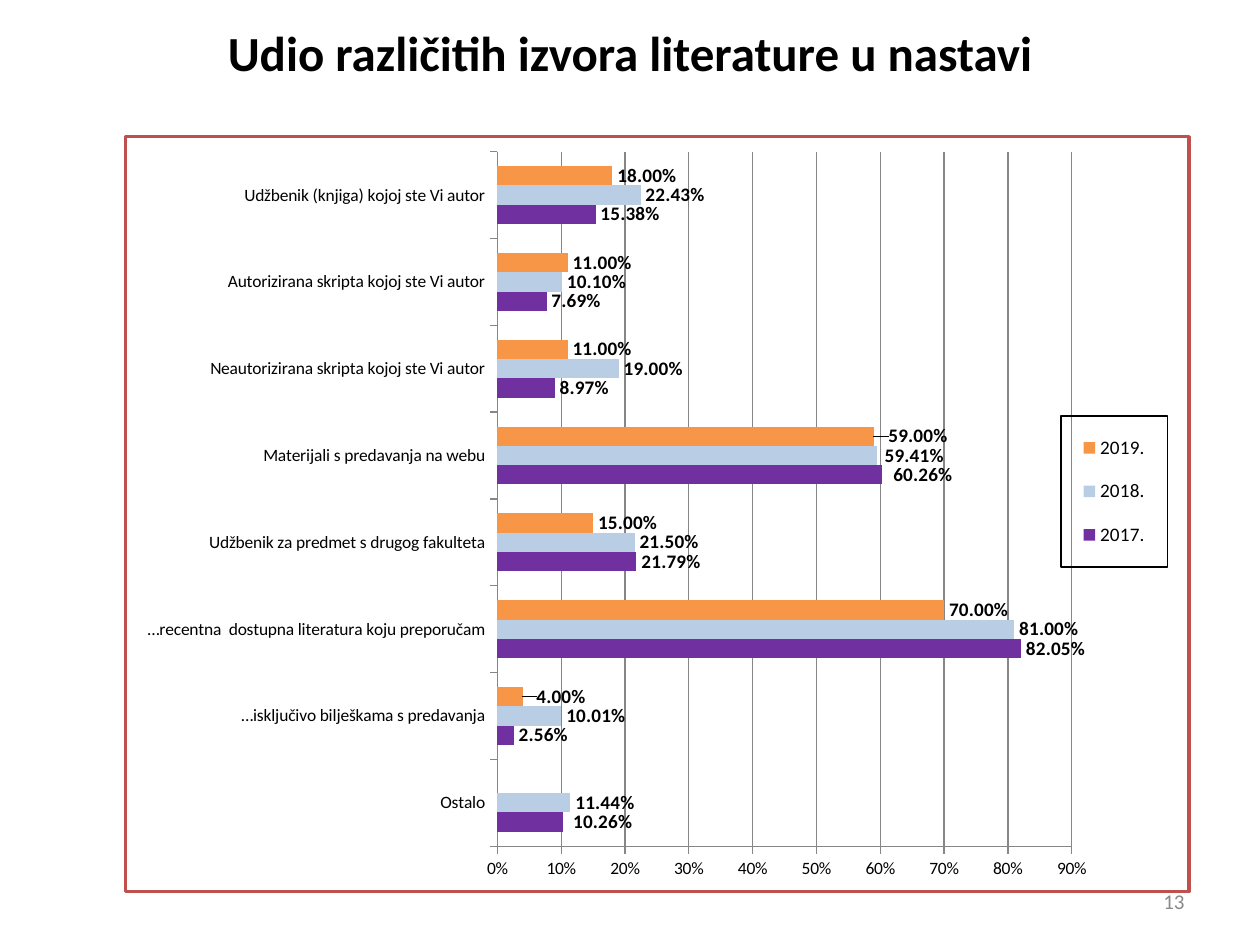
import pptx
import pptx.chart.data
import pptx.dml.color
import pptx.enum.chart
import pptx.enum.text
import pptx.oxml
import pptx.oxml.ns
import pptx.util
from pptx.util import Cm

FONT = "Calibri"
COLORS = {
    "text": "000000",
    "background": "FFFFFF",
    "border": "C0504D",
    "page number": "898989",
    "axis": "868686",
    "2017.": "7030A0",
    "2018.": "B9CDE5",
    "2019.": "F79646",
}
CATEGORIES = [
    "Ostalo",
    "…isključivo bilješkama s predavanja",
    "…recentna  dostupna literatura koju preporučam",
    "Udžbenik za predmet s drugog fakulteta",
    "Materijali s predavanja na webu",
    "Neautorizirana skripta kojoj ste Vi autor",
    "Autorizirana skripta kojoj ste Vi autor",
    "Udžbenik (knjiga) kojoj ste Vi autor",
]
SHARES = {
    "2017.": [0.1026, 0.0256, 0.8205, 0.2179, 0.6026, 0.0897, 0.0769, 0.1538],
    "2018.": [0.1144, 0.1001, 0.81, 0.215, 0.5941, 0.19, 0.101, 0.2243],
    "2019.": [None, 0.04, 0.7, 0.15, 0.59, 0.11, 0.11, 0.18],
}
# Labels moved right, by series and category index, as a share of chart width
LABEL_SHIFTS = {
    "2017.": {0: 0.005, 4: 0.006},
    "2018.": {4: 0.003},
    "2019.": {1: 0.008, 4: 0.009},
}


def rgb(name):
    return pptx.dml.color.RGBColor.from_string(COLORS[name])


def style_font(font, size, color="text", bold=False):
    font.name = FONT
    font.size = pptx.util.Pt(size)
    font.bold = bold
    font.color.rgb = rgb(color)


def write_text(shape, text, size, alignment, color="text", bold=False):
    frame = shape.text_frame
    frame.word_wrap = True
    frame.vertical_anchor = pptx.enum.text.MSO_ANCHOR.MIDDLE
    paragraph = frame.paragraphs[0]
    paragraph.alignment = alignment
    run = paragraph.add_run()
    run.text = text
    style_font(run.font, size, color, bold)


def chart_xml(content):
    return pptx.oxml.parse_xml(content.replace(
        ">", " " + pptx.oxml.ns.nsdecls("c", "a") + ">", 1))


def box_format(color, width, fill=""):
    """Return chart shape properties with an outline and an optional fill."""
    return chart_xml(
        f'<c:spPr>{fill}<a:ln w="{pptx.util.Pt(width)}"><a:solidFill>'
        f'<a:srgbClr val="{COLORS[color]}"/></a:solidFill></a:ln></c:spPr>')


def manual_layout(modes="", **values):
    numbers = "".join(f'<c:{key} val="{value}"/>' for key, value in values.items())
    return chart_xml(
        f"<c:layout><c:manualLayout>{modes}{numbers}</c:manualLayout></c:layout>")


def place(element, layout, after=None):
    """Replace the layout of a chart element, first or after the named child."""
    for old in element.findall(pptx.oxml.ns.qn("c:layout")):
        element.remove(old)
    if after is None:
        element.insert(0, layout)
    else:
        element.find(pptx.oxml.ns.qn(after)).addnext(layout)


def add_title(slide, text):
    title = slide.shapes.title
    title.left, title.top, title.width, title.height = Cm(1.8), Cm(0.33), Cm(21.8), Cm(1.45)
    title.fill.solid()
    title.fill.fore_color.rgb = rgb("background")
    write_text(title, text, 28, pptx.enum.text.PP_ALIGN.CENTER, bold=True)


def add_page_number(slide, number):
    box = slide.shapes.add_textbox(Cm(18.2), Cm(17.65), Cm(5.93), Cm(1.02))
    write_text(box, number, 12, pptx.enum.text.PP_ALIGN.RIGHT, "page number")


def style_axes(chart):
    for axis in (chart.category_axis, chart.value_axis):
        axis.major_tick_mark = pptx.enum.chart.XL_TICK_MARK.OUTSIDE
        axis.minor_tick_mark = pptx.enum.chart.XL_TICK_MARK.NONE
        axis.format.line.color.rgb = rgb("axis")
        style_font(axis.tick_labels.font, 10)
    value_axis = chart.value_axis
    value_axis.minimum_scale, value_axis.maximum_scale = 0, 0.9
    value_axis.major_unit = 0.1
    value_axis.tick_labels.number_format = "0%"
    value_axis.tick_labels.number_format_is_linked = False
    value_axis.has_major_gridlines = True
    value_axis.major_gridlines.format.line.color.rgb = rgb("axis")


def style_series(series):
    outside_end = pptx.enum.chart.XL_LABEL_POSITION.OUTSIDE_END
    series.format.fill.solid()
    series.format.fill.fore_color.rgb = rgb(series.name)
    series.invert_if_negative = False
    labels = series.data_labels
    labels.show_value = True
    labels.number_format = "0.00%"
    labels.number_format_is_linked = False
    labels.position = outside_end
    style_font(labels.font, 11, bold=True)
    for index, shift in LABEL_SHIFTS[series.name].items():
        label = series.points[index].data_label
        style_font(label.font, 11, bold=True)
        label.position = outside_end
        element = labels._element.xpath(f"c:dLbl[c:idx/@val='{index}']")[0]
        place(element, manual_layout(x=shift, y=0), after="c:idx")


def add_legend(chart):
    chart.has_legend = True
    legend = chart.legend
    legend.position = pptx.enum.chart.XL_LEGEND_POSITION.RIGHT
    legend.include_in_layout = False
    style_font(legend.font, 11)
    element = legend._element
    modes = '<c:xMode val="edge"/><c:yMode val="edge"/>'
    place(element, manual_layout(modes, x=0.88, y=0.37, w=0.1, h=0.2), after="c:legendPos")
    element.find(pptx.oxml.ns.qn("c:txPr")).addprevious(box_format("text", 0.75))


def add_share_chart(slide):
    data = pptx.chart.data.CategoryChartData(number_format="0.00%")
    data.categories = CATEGORIES
    for year, shares in SHARES.items():
        data.add_series(year, shares)
    chart = slide.shapes.add_chart(
        pptx.enum.chart.XL_CHART_TYPE.BAR_CLUSTERED,
        Cm(2.49), Cm(2.72), Cm(21.51), Cm(15.29), data).chart
    chart.has_title = False
    style_font(chart.font, 10)
    plot = chart.plots[0]
    plot.gap_width, plot.overlap = 150, 0
    plot.vary_by_categories = False
    style_axes(chart)
    for series in plot.series:
        style_series(series)
    add_legend(chart)

    space = chart._chartSpace
    modes = '<c:layoutTarget val="inner"/><c:xMode val="edge"/><c:yMode val="edge"/>'
    place(space.chart.plotArea, manual_layout(modes, x=0.35, y=0.02, w=0.54, h=0.92))
    fill = f'<a:solidFill><a:srgbClr val="{COLORS["background"]}"/></a:solidFill>'
    space.chart.addnext(box_format("border", 2, fill))


def main():
    presentation = pptx.Presentation()
    presentation.slide_width, presentation.slide_height = Cm(25.4), Cm(19.05)
    slide = presentation.slides.add_slide(presentation.slide_layouts[5])
    add_page_number(slide, "13")
    add_title(slide, "Udio različitih izvora literature u nastavi")
    add_share_chart(slide)
    presentation.save("out.pptx")


if __name__ == "__main__":
    main()
